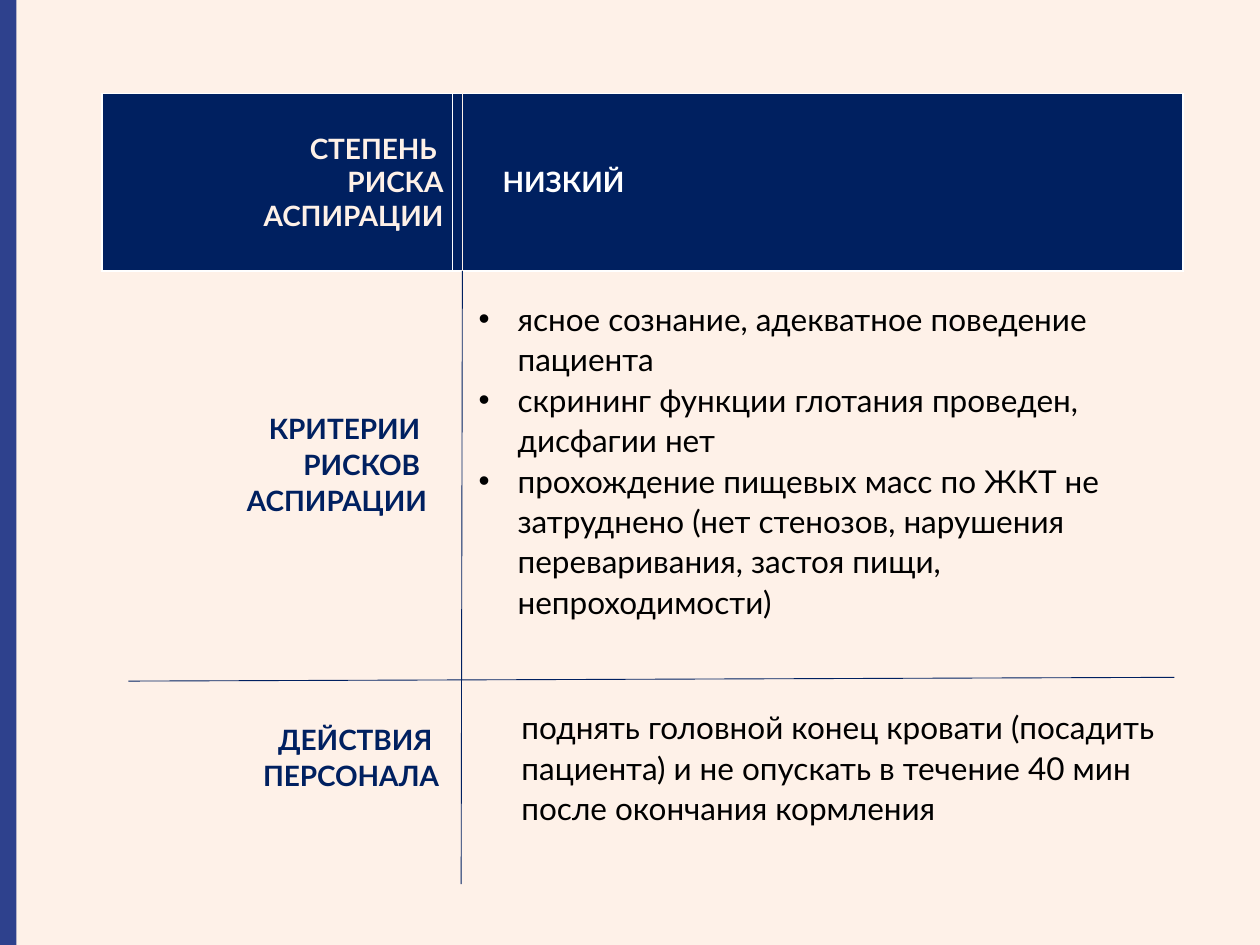
from lxml.etree import SubElement
from pptx import Presentation
from pptx.dml.color import RGBColor
from pptx.enum.shapes import MSO_CONNECTOR as Connector, MSO_SHAPE as Shape
from pptx.enum.text import MSO_ANCHOR as Anchor, PP_ALIGN as Align
from pptx.oxml.ns import qn
from pptx.util import Inches, Pt

COLORS = {
    "background": "FEF1E8",
    "stripe": "2E418D",
    "navy": "002060",
    "white": "FFFFFF",
    "black": "000000",
}
FONT = "Lato"
WIDTH, HEIGHT = 10, 7.5
LABEL_SHARE = 0.324
LINE_SPACING = 1.07
BULLET_INDENT = 0.31

RISK_LABEL = ["СТЕПЕНЬ ", "РИСКА", "АСПИРАЦИИ"]
RISK_LEVEL = ["НИЗКИЙ"]
CRITERIA_LABEL = ["КРИТЕРИИ ", "РИСКОВ ", "АСПИРАЦИИ"]
CRITERIA = [
    "ясное сознание, адекватное поведение пациента",
    "скрининг функции глотания проведен, дисфагии нет",
    "прохождение пищевых масс по ЖКТ не затруднено (нет стенозов, нарушения "
    "переваривания, застоя пищи, непроходимости)",
]
ACTIONS_LABEL = ["ДЕЙСТВИЯ ", "ПЕРСОНАЛА"]
ACTIONS = [
    "поднять головной конец кровати (посадить пациента) и не опускать "
    "в течение 40 мин после окончания кормления"
]


def color(name):
    """Return the named palette colour."""
    return RGBColor.from_string(COLORS[name])


def write(frame, lines, size, ink, bold=False, align=Align.LEFT, spacing=None):
    """Write one paragraph per line into a text frame."""
    for index, line in enumerate(lines):
        paragraph = frame.add_paragraph() if index else frame.paragraphs[0]
        paragraph.alignment = align
        if spacing:
            paragraph.line_spacing = spacing
        run = paragraph.add_run()
        run.text = line
        run.font.name = FONT
        run.font.size = Pt(size)
        run.font.bold = bold
        run.font.color.rgb = color(ink)


def add_bullets(frame):
    """Give every paragraph a hanging round bullet."""
    indent = Inches(BULLET_INDENT)
    for paragraph in frame.paragraphs:
        properties = paragraph._p.get_or_add_pPr()
        properties.set("marL", str(indent))
        properties.set("indent", str(-indent))
        SubElement(properties, qn("a:buFont"), typeface="Arial")
        SubElement(properties, qn("a:buChar"), char="•")


def add_text(slide, box, lines, size, ink, **style):
    """Add a wrapped text box and return its frame."""
    frame = slide.shapes.add_textbox(*map(Inches, box)).text_frame
    frame.word_wrap = True
    write(frame, lines, size, ink, spacing=LINE_SPACING, **style)
    return frame


def add_rule(slide, start, end, ink):
    """Draw a thin rule between two points."""
    rule = slide.shapes.add_connector(
        Connector.STRAIGHT, *map(Inches, (*start, *end))
    )
    rule.line.color.rgb = color(ink)
    rule.line.width = Pt(0.5)
    SubElement(rule._element.spPr, qn("a:effectLst"))


def add_stripe(slide, box):
    """Fill the box with the side stripe."""
    stripe = slide.shapes.add_shape(Shape.RECTANGLE, *map(Inches, box))
    stripe.shadow.inherit = False
    stripe.fill.solid()
    stripe.fill.fore_color.rgb = color("stripe")
    stripe.line.fill.background()


def add_header(slide, box):
    """Place the two-cell risk header in the box."""
    table = slide.shapes.add_table(1, 2, *map(Inches, box)).table
    width = box[2]
    shares = (LABEL_SHARE, 1 - LABEL_SHARE)
    contents = (
        (RISK_LABEL, "background", Align.RIGHT, 0.07),
        (RISK_LEVEL, "white", Align.LEFT, 0.4),
    )
    for index, (lines, ink, align, margin) in enumerate(contents):
        table.columns[index].width = Inches(width * shares[index])
        cell = table.cell(0, index)
        cell.fill.solid()
        cell.fill.fore_color.rgb = color("navy")
        cell.vertical_anchor = Anchor.MIDDLE
        cell.margin_left, cell.margin_right = Inches(margin), Inches(0.07)
        cell.margin_top = cell.margin_bottom = Inches(0.04)
        write(cell.text_frame, lines, 16, ink, bold=True, align=align)


def add_rules(slide, box, header_height):
    """Divide the box into label and content columns and two rows."""
    left, top, width, height = box
    divider = left + width / 3
    header_bottom = top + header_height
    row_line = top + 0.74 * height
    add_rule(slide, (divider, top), (divider, header_bottom), "background")
    add_rule(slide, (divider, header_bottom), (divider - 0.01, top + height), "navy")
    add_rule(
        slide,
        (left + 0.21, row_line + 0.02),
        (left + width - 0.07, row_line - 0.01),
        "navy",
    )


def add_row(slide, box, label, label_drop, content, content_left, bulleted=False):
    """Place a right-aligned label and its content in the box."""
    left, top, width, height = box
    add_text(
        slide,
        (left, top + label_drop, LABEL_SHARE * width, 0.3 * len(label) + 0.06),
        label, 16, "navy", bold=True, align=Align.RIGHT,
    )
    frame = add_text(
        slide,
        (left + content_left, top, width - content_left, height),
        content, 18, "black",
    )
    if bulleted:
        add_bullets(frame)


def main():
    """Build the low aspiration risk slide."""
    deck = Presentation()
    deck.slide_width, deck.slide_height = Inches(WIDTH), Inches(HEIGHT)
    slide = deck.slides.add_slide(deck.slide_layouts[6])
    slide.background.fill.solid()
    slide.background.fill.fore_color.rgb = color("background")

    left, top, width = 0.081 * WIDTH, 0.0987 * HEIGHT, 0.858 * WIDTH
    header_height = 0.188 * HEIGHT
    row_left, row_width = 0.073 * WIDTH, 0.87 * WIDTH
    add_stripe(slide, (0, 0, 0.013 * WIDTH, HEIGHT))
    add_header(slide, (left, top, width, header_height))
    add_rules(slide, (left, top, width, 0.837 * HEIGHT), header_height)
    add_row(
        slide, (row_left, 0.308 * HEIGHT, 0.851 * WIDTH, 0.359 * HEIGHT),
        CRITERIA_LABEL, 0.89, CRITERIA, 2.97, bulleted=True,
    )
    add_row(
        slide, (row_left, 0.74 * HEIGHT, 0.881 * WIDTH, 0.143 * HEIGHT),
        ACTIONS_LABEL, 0.12, ACTIONS, 3.31,
    )
    deck.save("out.pptx")


if __name__ == "__main__":
    main()
